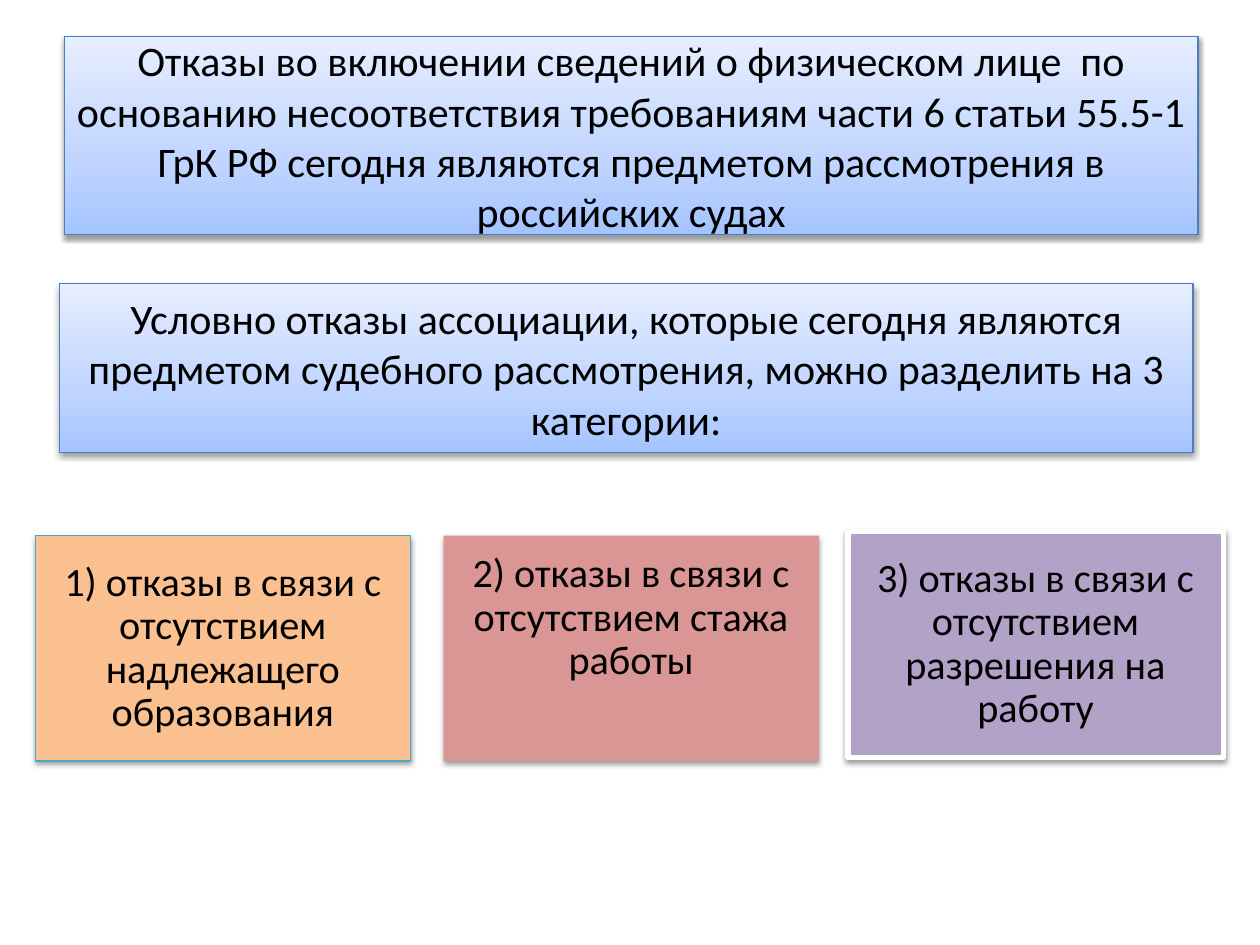
import copy

import pptx
import pptx.dml.color
import pptx.enum.shapes
import pptx.enum.text
import pptx.oxml
import pptx.oxml.ns
import pptx.util
from pptx.util import Inches

COLORS = {
    "text": "000000",
    "banner_line": "4B7EBC",
    "orange": "FAC090",
    "orange_line": "46AAC5",
    "red": "D99694",
    "purple": "B3A2C7",
    "white": "FFFFFF",
}
BANNER_STOPS = [(0, "A4C4FF"), (0.35, "BFD4FF"), (1, "E6EEFF")]
SHADOW_XML = (
    f'<a:effectLst {pptx.oxml.ns.nsdecls("a")}>'
    '<a:outerShdw blurRad="40000" dist="20000" dir="5400000" rotWithShape="0">'
    f'<a:srgbClr val="{COLORS["text"]}"><a:alpha val="38000"/></a:srgbClr>'
    "</a:outerShdw></a:effectLst>"
)


def rgb(value):
    return pptx.dml.color.RGBColor.from_string(value)


def add_box(left, top, width, height, text, size, line, line_width):
    """Add a shadowed rectangle with centred text; its fill is set by the caller."""
    shape = slide.shapes.add_shape(
        pptx.enum.shapes.MSO_SHAPE.RECTANGLE,
        Inches(left), Inches(top), Inches(width), Inches(height),
    )
    if line:
        shape.line.color.rgb = rgb(COLORS[line])
        shape.line.width = pptx.util.Pt(line_width)
    else:
        shape.line.fill.background()
    shape.shadow.inherit = False
    properties = shape.fill._xPr
    properties.replace(
        properties.find(pptx.oxml.ns.qn("a:effectLst")), pptx.oxml.parse_xml(SHADOW_XML)
    )
    frame = shape.text_frame
    frame.word_wrap = True
    frame.vertical_anchor = pptx.enum.text.MSO_ANCHOR.MIDDLE
    paragraph = frame.paragraphs[0]
    paragraph.text = text
    paragraph.alignment = pptx.enum.text.PP_ALIGN.CENTER
    paragraph.font.name = "Calibri"
    paragraph.font.size = pptx.util.Pt(size)
    paragraph.font.color.rgb = rgb(COLORS["text"])
    return shape


presentation = pptx.Presentation()
presentation.slide_width = Inches(10)
presentation.slide_height = Inches(7.5)
slide = presentation.slides.add_slide(presentation.slide_layouts[6])

# Two gradient banners
banners = [
    (0.51, 0.29, 1.57,
     "Отказы во включении сведений о физическом лице  по основанию несоответствия "
     "требованиям части 6 статьи 55.5-1 ГрК РФ сегодня являются предметом "
     "рассмотрения в российских судах"),
    (0.47, 2.25, 1.34,
     "Условно отказы ассоциации, которые сегодня являются предметом судебного "
     "рассмотрения, можно разделить на 3 категории:"),
]
for left, top, height, text in banners:
    banner = add_box(left, top, 9, height, text, 24, "banner_line", 0.75)
    banner.fill.gradient()
    banner.fill.gradient_angle = 90
    stop_list = banner.fill._xPr.find(".//" + pptx.oxml.ns.qn("a:gsLst"))
    stop_list.insert(1, copy.deepcopy(stop_list[0]))
    for stop, (position, color) in zip(banner.fill.gradient_stops, BANNER_STOPS):
        stop.position = position
        stop.color.rgb = rgb(color)

# Three category cards: the second one holds its text higher
cards = [
    (0.28, 4.25, "orange", "orange_line", 0.75, 0.1,
     "1) отказы в связи с отсутствием надлежащего образования"),
    (3.52, 4.25, "red", None, 0, 0.58,
     "2) отказы в связи с отсутствием стажа работы"),
    (6.73, 4.22, "purple", "white", 3, 0.1,
     "3) отказы в связи с отсутствием разрешения на работу"),
]
for left, top, fill, line, line_width, bottom_margin, text in cards:
    card = add_box(left, top, 2.98, 1.79, text, 23, line, line_width)
    card.fill.solid()
    card.fill.fore_color.rgb = rgb(COLORS[fill])
    frame = card.text_frame
    frame.margin_left = frame.margin_right = frame.margin_top = Inches(0.1)
    frame.margin_bottom = Inches(bottom_margin)
    frame.paragraphs[0].line_spacing = 0.9

presentation.save("out.pptx")
